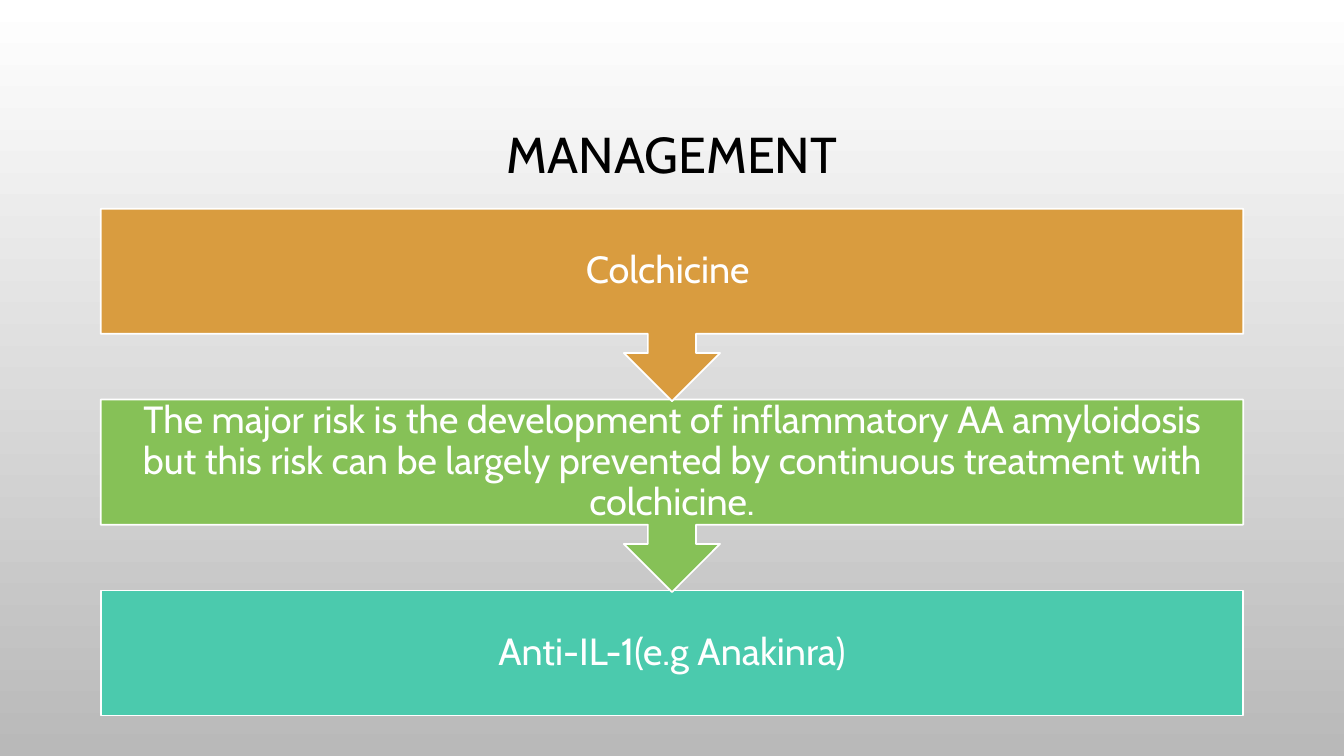
from pptx import Presentation
from pptx.dml.color import RGBColor
from pptx.enum.shapes import MSO_SHAPE
from pptx.enum.text import MSO_ANCHOR, MSO_AUTO_SIZE, PP_ALIGN
from pptx.util import Cm, Pt

HUES = {
    "white": "FFFFFF",
    "grey": "B9B9B9",
    "black": "000000",
    "gold": "D99C3F",
    "green": "86C157",
    "teal": "4BCAAD",
}
LEFT, WIDTH = Cm(2.54), Cm(28.79)


def tint(name):
    return RGBColor.from_string(HUES[name])


def write(frame, text, size, hue):
    frame.text = text
    frame.word_wrap = True
    frame.auto_size = MSO_AUTO_SIZE.NONE
    frame.vertical_anchor = MSO_ANCHOR.MIDDLE
    para = frame.paragraphs[0]
    para.alignment = PP_ALIGN.CENTER
    para.line_spacing = 0.9
    para.font.name = "Cabin"
    para.font.size = Pt(size)
    para.font.color.rgb = tint(hue)


deck = Presentation()
deck.slide_width, deck.slide_height = Cm(33.87), Cm(19.05)
slide = deck.slides.add_slide(deck.slide_layouts[5])

# Background: white fading down to grey
back = slide.background.fill
back.gradient()
back.gradient_angle = 270
for stop, hue, spot in zip(back.gradient_stops, ("white", "grey"), (0, 1)):
    stop.color.rgb = tint(hue)
    stop.position = spot

# Title
title = slide.shapes.title
title.left, title.top, title.width, title.height = LEFT, Cm(1.73), WIDTH, Cm(4.45)
write(title.text_frame, "MANAGEMENT", 36, "black")

# Steps, last one first so that each arrow tip lies over the next box
CALL = MSO_SHAPE.DOWN_ARROW_CALLOUT
steps = [
    ("Colchicine ", "gold", CALL, 4.85),
    ("The major risk is the development of inflammatory AA amyloidosis but this "
     "risk can be largely prevented by continuous treatment with colchicine.",
     "green", CALL, 4.85),
    ("Anti-IL-1(e.g Anakinra)", "teal", MSO_SHAPE.RECTANGLE, 3.15),
]
for row, (text, hue, kind, height) in reversed(list(enumerate(steps))):
    step = slide.shapes.add_shape(kind, LEFT, Cm(5.26 + 4.81 * row), WIDTH, Cm(height))
    step.shadow.inherit = False
    step.fill.solid()
    step.fill.fore_color.rgb = tint(hue)
    step.line.color.rgb = tint("white")
    step.line.width = Pt(1.25)
    frame = step.text_frame
    frame.margin_left = frame.margin_right = Cm(0.53)
    frame.margin_top = frame.margin_bottom = Cm(0.53)
    write(frame, text, 27, "white")

deck.save("out.pptx")
